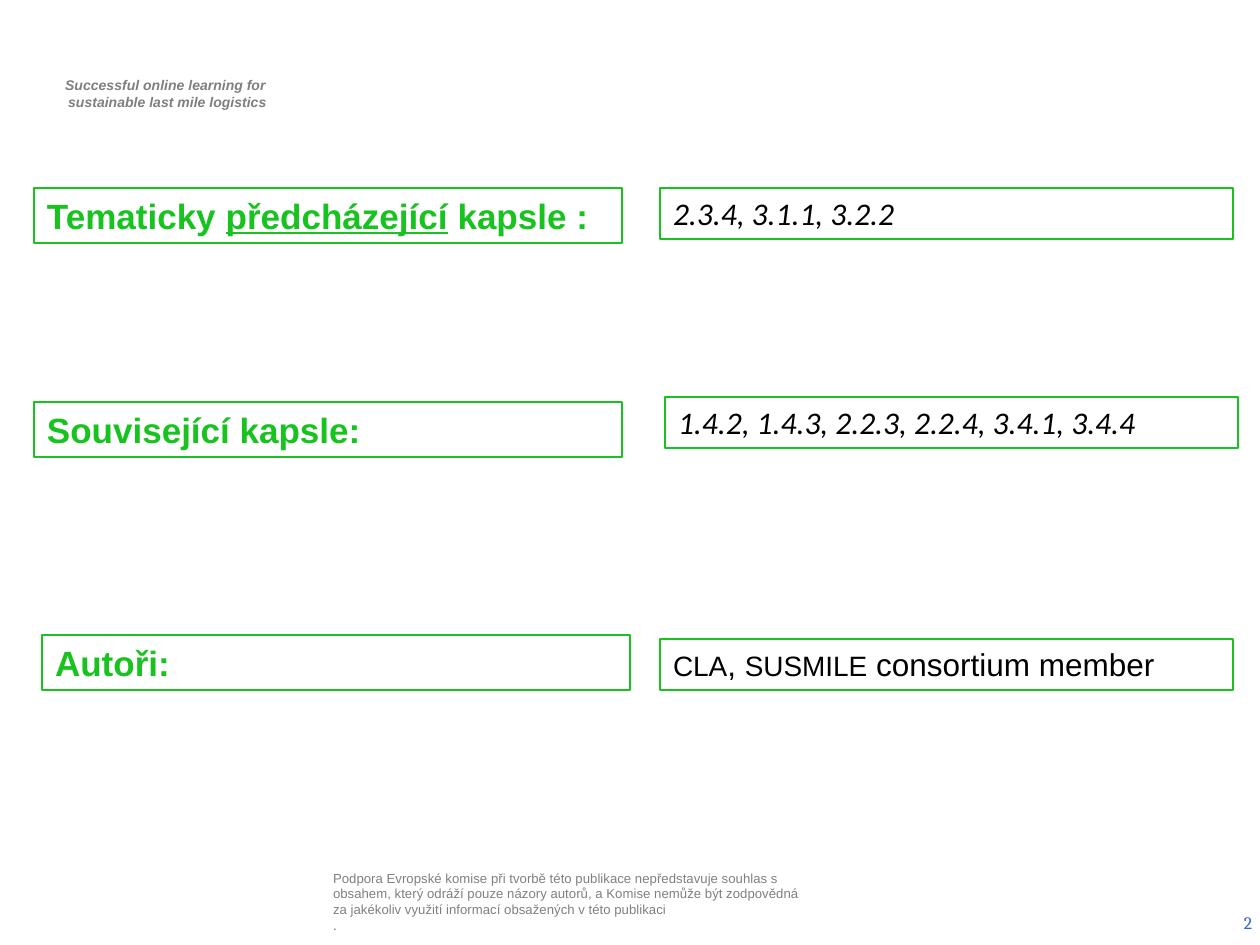
from dataclasses import dataclass

from pptx import Presentation
from pptx.dml.color import RGBColor as Rgb
from pptx.enum.shapes import MSO_SHAPE as Shape
from pptx.enum.text import MSO_ANCHOR as Anchor, PP_ALIGN as Align
from pptx.util import Pt

PX = 914400 / 126


@dataclass(frozen=True)
class Theme:
    green: str = "18C320"
    white: str = "FFFFFF"
    black: str = "000000"
    gray: str = "7F7F7F"
    note: str = "808080"
    dot: str = "666666"
    blue: str = "3366CC"
    sans: str = "Arial"
    body: str = "Calibri"
    serif: str = "Cambria"
    label: float = 20
    value: float = 18
    caps: float = 16
    motto: float = 8
    legal: float = 7.5
    page: float = 10


THEME = Theme()


def px(*nums):
    return [round(n * PX) for n in nums]


def style(run, size, color, face, bold=False, italic=False):
    font = run.font
    font.size, font.name = Pt(size), face
    font.bold, font.italic = bold, italic
    font.color.rgb = Rgb.from_string(color)


def setup(frame, side=13, top=6, base=6, anchor=Anchor.TOP):
    """Wrap the text and set the insets in px."""
    frame.word_wrap = True
    frame.vertical_anchor = anchor
    frame.margin_left = frame.margin_right = px(side)[0]
    frame.margin_top, frame.margin_bottom = px(top, base)


def add_text(slide, box):
    return slide.shapes.add_textbox(*px(*box)).text_frame


def add_box(slide, box, parts):
    """Draw a framed box and return its runs, one for each part."""
    rect = slide.shapes.add_shape(Shape.RECTANGLE, *px(*box))
    rect.shadow.inherit = False
    rect.fill.solid()
    rect.fill.fore_color.rgb = Rgb.from_string(THEME.white)
    rect.line.color.rgb = Rgb.from_string(THEME.green)
    rect.line.width = Pt(0.75)
    frame = rect.text_frame
    setup(frame)
    para = frame.paragraphs[0]
    para.alignment = Align.LEFT
    for part in parts:
        para.add_run().text = part
    return para.runs


def add_label(slide, left, top, parts):
    runs = add_box(slide, (left, top, 588, 55), parts)
    for run in runs:
        style(run, THEME.label, THEME.green, THEME.sans, bold=True)
    return runs


def add_value(slide, left, top, parts):
    return add_box(slide, (left, top, 573, 51), parts)


def add_codes(slide, left, top, codes):
    run = add_value(slide, left, top, [codes])[0]
    style(run, THEME.value, THEME.black, THEME.body, italic=True)


def add_motto(slide, box):
    frame = add_text(slide, box)
    setup(frame)
    frame.text = "Successful online learning for \nsustainable last mile logistics"
    for para in frame.paragraphs:
        para.alignment = Align.CENTER
        para._p.get_or_add_pPr().set("marL", str(px(5)[0]))
        style(para.runs[0], THEME.motto, THEME.gray, THEME.sans, True, True)


def add_legal(slide, box):
    frame = add_text(slide, box)
    setup(frame, side=5, top=5, base=23, anchor=Anchor.MIDDLE)
    frame.text = (
        "Podpora Evropské komise při tvorbě této publikace nepředstavuje "
        "souhlas s obsahem, který odráží pouze názory autorů, a Komise nemůže "
        "být zodpovědná za jakékoliv využití informací obsažených v této "
        "publikaci\n."
    )
    for para, color in zip(frame.paragraphs, (THEME.note, THEME.dot)):
        style(para.runs[0], THEME.legal, color, THEME.sans)


def add_page(slide, box):
    frame = add_text(slide, box)
    setup(frame, anchor=Anchor.MIDDLE)
    frame.text = "2"
    para = frame.paragraphs[0]
    para.alignment = Align.RIGHT
    style(para.runs[0], THEME.page, THEME.blue, THEME.serif)


def add_authors(slide, left, top):
    parts = ["CLA", ", ", "SUSMILE", " consortium member"]
    for run in add_value(slide, left, top, parts):
        size = THEME.caps if run.text.isupper() else THEME.value
        style(run, size, THEME.black, THEME.sans)


def main():
    deck = Presentation()
    deck.slide_width, deck.slide_height = px(1260, 945)
    slide = deck.slides.add_slide(deck.slide_layouts[6])

    add_motto(slide, (37, 71, 256, 47))
    add_legal(slide, (328, 879, 483, 63))
    add_page(slide, (971, 898, 294, 50))

    runs = add_label(slide, 34, 188, ["Tematicky ", "předcházející", " kapsle :"])
    runs[1].font.underline = True
    add_codes(slide, 660, 188, "2.3.4, 3.1.1, 3.2.2")
    add_label(slide, 34, 402, ["Související kapsle:"])
    add_codes(slide, 665, 397, "1.4.2, 1.4.3, 2.2.3, 2.2.4, 3.4.1, 3.4.4")
    add_label(slide, 42, 635, ["Autoři:"])
    add_authors(slide, 660, 639)

    deck.save("out.pptx")


if __name__ == "__main__":
    main()
